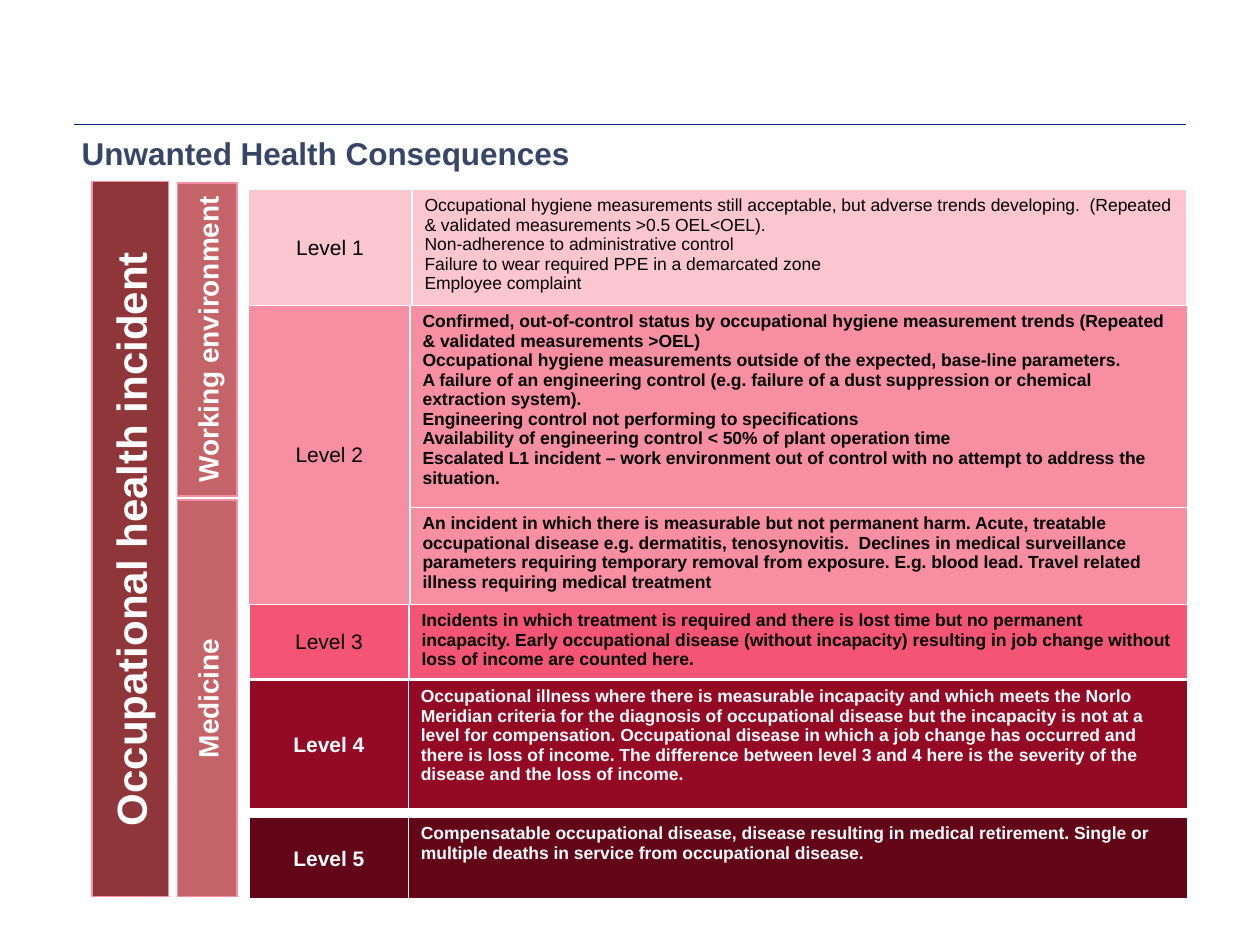
import lxml.etree
import pptx
import pptx.dml.color
import pptx.enum.shapes
import pptx.enum.text
import pptx.oxml.ns
import pptx.util

Pt = pptx.util.Pt
RGB = pptx.dml.color.RGBColor
ALIGN = pptx.enum.text.PP_ALIGN
ANCHOR = pptx.enum.text.MSO_ANCHOR

WHITE = RGB(0xFF, 0xFF, 0xFF)
BLACK = RGB(0, 0, 0)
NAVY = RGB(0x00, 0x27, 0x76)
SLATE = RGB(0x37, 0x46, 0x66)
BRICK = RGB(0x8F, 0x36, 0x3B)
ROSE = RGB(0xC4, 0x63, 0x68)
BLUSH = RGB(0xFC, 0xC6, 0xD1)
PINK = RGB(0xF8, 0x8E, 0xA2)
CORAL = RGB(0xF5, 0x55, 0x74)
RUBY = RGB(0x94, 0x09, 0x24)
WINE = RGB(0x63, 0x06, 0x18)

WIDTH = 536.4

# Name, left, top, first column, fill, ink, bold name, bold text, rows (height, lines)
LEVELS = [
    ("Level 1", 141.8, 108.3, 93.6, BLUSH, BLACK, False, False, [
        (62.4, [
            "Occupational hygiene measurements still acceptable, but adverse trends "
            "developing.  (Repeated & validated measurements >0.5 OEL<OEL).",
            "Non-adherence to administrative control",
            "Failure to wear required PPE in a demarcated zone",
            "Employee complaint",
        ]),
    ]),
    ("Level 2", 142.1, 174.6, 92.2, PINK, BLACK, False, True, [
        (107, [
            "Confirmed, out-of-control status by occupational hygiene measurement "
            "trends (Repeated & validated measurements >OEL)",
            "Occupational hygiene measurements outside of the expected, base-line "
            "parameters.",
            "A failure of an engineering control (e.g. failure of a dust suppression "
            "or chemical extraction system).",
            "Engineering control not performing to specifications",
            "Availability of engineering control < 50% of plant operation time",
            "Escalated L1 incident – work environment out of control with no attempt "
            "to address the situation.",
        ]),
        (52, [
            "An incident in which there is measurable but not permanent harm. Acute, "
            "treatable occupational disease e.g. dermatitis, tenosynovitis.  Declines "
            "in medical surveillance parameters requiring temporary removal from "
            "exposure. E.g. blood lead. Travel related illness requiring medical "
            "treatment",
        ]),
    ]),
    ("Level 3", 142.3, 345.4, 91.4, CORAL, BLACK, False, True, [
        (41, [
            "Incidents in which treatment is required and there is lost time but no "
            "permanent incapacity. Early occupational disease (without incapacity) "
            "resulting in job change without loss of income are counted here.",
        ]),
    ]),
    ("Level 4", 142.6, 388.8, 90.7, RUBY, WHITE, True, True, [
        (74.5, [
            "Occupational illness where there is measurable incapacity and which meets "
            "the Norlo Meridian criteria for the diagnosis of occupational disease but "
            "the incapacity is not at a level for compensation. Occupational disease "
            "in which a job change has occurred and there is loss of income. The "
            "difference between level 3 and 4 here is the severity of the disease and "
            "the loss of income.",
        ]),
    ]),
    ("Level 5", 142.6, 467.2, 90.7, WINE, WHITE, True, True, [
        (47.5, [
            "Compensatable occupational disease, disease resulting in medical "
            "retirement. Single or multiple deaths in service from occupational "
            "disease.",
        ]),
    ]),
]


def write(frame, *lines, size=10, color=BLACK, bold=False, align=ALIGN.LEFT):
    for i, line in enumerate(lines):
        para = frame.paragraphs[0] if i == 0 else frame.add_paragraph()
        para.alignment = align
        run = para.add_run()
        run.text = line
        font = run.font
        font.name, font.size, font.bold = "Arial", Pt(size), bold
        font.color.rgb = color


def edge(cell, low):
    """Draw white cell borders, the bottom one being low points wide."""
    props = cell._tc.get_or_add_tcPr()
    for i, (side, width) in enumerate(zip("LRTB", (1, 1, 1, low))):
        line = lxml.etree.Element(pptx.oxml.ns.qn(f"a:ln{side}"), w=str(Pt(width)))
        fill = lxml.etree.SubElement(line, pptx.oxml.ns.qn("a:solidFill"))
        lxml.etree.SubElement(fill, pptx.oxml.ns.qn("a:srgbClr"), val=str(WHITE))
        props.insert(i, line)


class Deck:
    def __init__(self):
        self.show = pptx.Presentation()
        self.show.slide_width, self.show.slide_height = Pt(720), Pt(540)
        self.slide = self.show.slides.add_slide(self.show.slide_layouts[6])

    def rule(self, left, right, top):
        line = self.slide.shapes.add_connector(
            pptx.enum.shapes.MSO_CONNECTOR.STRAIGHT, Pt(left), Pt(top), Pt(right), Pt(top))
        line.line.color.rgb, line.line.width = NAVY, Pt(0.5)
        lxml.etree.SubElement(line._element.spPr, pptx.oxml.ns.qn("a:effectLst"))

    def title(self, text, *box):
        frame = self.slide.shapes.add_textbox(*map(Pt, box)).text_frame
        frame.word_wrap = True
        frame.vertical_anchor = ANCHOR.MIDDLE
        write(frame, text, size=18, color=SLATE, bold=True)

    def band(self, text, *box, fill=ROSE, size=16):
        """Add a tall bar whose text reads upwards."""
        bar = self.slide.shapes.add_shape(
            pptx.enum.shapes.MSO_SHAPE.RECTANGLE, *map(Pt, box))
        bar.shadow.inherit = False
        bar.fill.solid()
        bar.fill.fore_color.rgb = fill
        bar.line.color.rgb, bar.line.width = PINK, Pt(0.75)
        frame = bar.text_frame
        frame.word_wrap = False
        frame.vertical_anchor = ANCHOR.MIDDLE
        frame._txBody.bodyPr.set("vert", "vert270")
        write(frame, text, size=size, color=WHITE, bold=True, align=ALIGN.CENTER)

    def level(self, name, left, top, first, fill, ink, strong, bold, rows):
        high = sum(height for height, _ in rows)
        grid = self.slide.shapes.add_table(
            len(rows), 2, Pt(left), Pt(top), Pt(WIDTH), Pt(high)).table
        grid.first_row = grid.horz_banding = False
        grid.columns[0].width, grid.columns[1].width = Pt(first), Pt(WIDTH - first)
        for cell in grid.iter_cells():
            cell.fill.solid()
            cell.fill.fore_color.rgb = fill
            edge(cell, 3 if len(rows) == 1 else 1)
        for i, (height, lines) in enumerate(rows):
            grid.rows[i].height = Pt(height)
            write(grid.cell(i, 1).text_frame, *lines, color=ink, bold=bold)
        head = grid.cell(0, 0)
        if len(rows) > 1:
            head.merge(grid.cell(len(rows) - 1, 0))
        head.vertical_anchor = ANCHOR.MIDDLE
        write(head.text_frame, name, size=12, color=ink, bold=strong, align=ALIGN.CENTER)


def main():
    deck = Deck()
    deck.rule(42.5, 677.5, 71.3)
    deck.title("Unwanted Health Consequences", 39.6, 61.9, 612, 51.1)
    deck.band("Occupational health incident", 52.6, 103.7, 43.6, 408.7, fill=BRICK, size=24)
    deck.band("Working environment", 101.5, 104.6, 34, 178.8)
    deck.band("Medicine", 101.5, 285.8, 34, 226.6)
    for level in LEVELS:
        deck.level(*level)
    deck.show.save("out.pptx")


if __name__ == "__main__":
    main()
